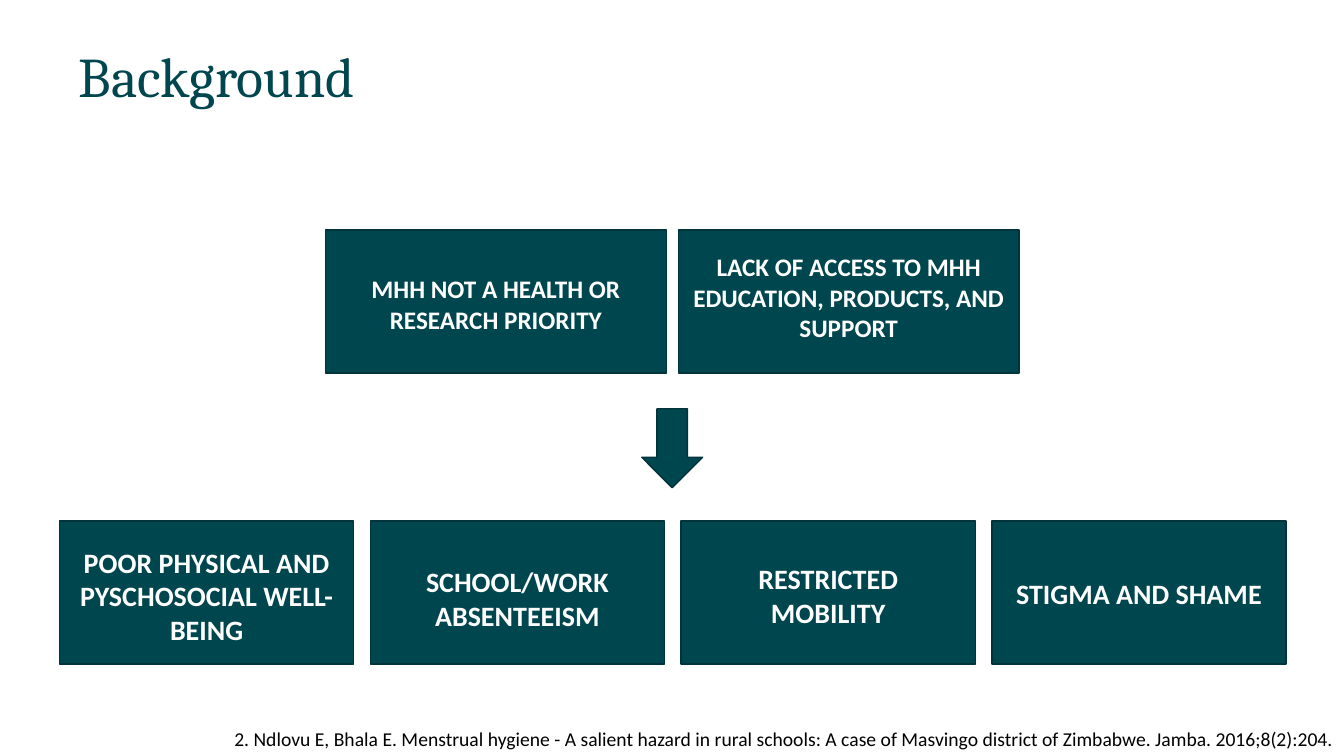
from pptx import Presentation
from pptx import util as u
from pptx.dml.color import RGBColor
from pptx.enum import shapes, text

# Content: wording and how far each label sits below its box centre (points)
TITLE = "Background"
CAUSES = [
    ("MHH NOT A HEALTH OR RESEARCH PRIORITY", 1.8),
    ("LACK OF ACCESS TO MHH EDUCATION, PRODUCTS, AND SUPPORT", -3.2),
]
EFFECTS = [
    ("POOR PHYSICAL AND PYSCHOSOCIAL WELL-BEING", 2),
    ("SCHOOL/WORK ABSENTEEISM", 4),
    ("RESTRICTED MOBILITY", 2),
    ("STIGMA AND SHAME", 0.7),
]
REFERENCE = ("2. Ndlovu E, Bhala E. Menstrual hygiene - A salient hazard in rural schools: "
             "A case of Masvingo district of Zimbabwe. Jamba. 2016;8(2):204.")

TEAL = RGBColor(0x00, 0x46, 0x4E)
DARK_TEAL = RGBColor(0x00, 0x34, 0x3A)
WHITE = RGBColor(0xFF, 0xFF, 0xFF)
BLACK = RGBColor(0x00, 0x00, 0x00)
BOX_HEIGHT = 102.2

deck = Presentation()
deck.slide_width, deck.slide_height = u.Pt(960), u.Pt(540)
page = deck.slides.add_slide(deck.slide_layouts[5])


def place(item, left, top, width, height):
    item.left, item.top = u.Pt(left), u.Pt(top)
    item.width, item.height = u.Pt(width), u.Pt(height)


def write(frame, wording, size, colour, align, font="Calibri", bold=False):
    frame.word_wrap = True
    frame.text = wording
    para = frame.paragraphs[0]
    para.alignment = align
    para.font.name, para.font.size, para.font.bold = font, u.Pt(size), bold
    para.font.color.rgb = colour
    return para


def add_teal(kind, left, top, width, height):
    shape = page.shapes.add_shape(kind, *map(u.Pt, (left, top, width, height)))
    shape.shadow.inherit = False
    shape.fill.solid()
    shape.fill.fore_color.rgb = TEAL
    shape.line.color.rgb = DARK_TEAL
    shape.line.width = u.Pt(1)
    return shape


def add_row(labels, left, top, width, pitch, size, side_margin):
    for index, (wording, drop) in enumerate(labels):
        box = add_teal(shapes.MSO_SHAPE.RECTANGLE, left + index * pitch, top, width, BOX_HEIGHT)
        frame = box.text_frame
        frame.vertical_anchor = text.MSO_ANCHOR.MIDDLE
        frame.margin_left = frame.margin_right = u.Pt(side_margin)
        frame.margin_top, frame.margin_bottom = u.Pt(8 + drop), u.Pt(8 - drop)
        write(frame, wording, size, WHITE, text.PP_ALIGN.CENTER, bold=True)


# Title
title = page.shapes.title
place(title, 49, 28.8, 844.5, 55.4)
title.text_frame.vertical_anchor = text.MSO_ANCHOR.MIDDLE
heading = write(title.text_frame, TITLE, 40, TEAL, text.PP_ALIGN.LEFT, font="Cambria")
heading.line_spacing = 0.9

# Causes, arrow, effects
add_row(CAUSES, left=232.5, top=164.2, width=243.4, pitch=252, size=18, side_margin=7.2)
add_teal(shapes.MSO_SHAPE.DOWN_ARROW, 458.4, 292, 43.5, 56.4)
add_row(EFFECTS, left=42.5, top=372.2, width=210.2, pitch=222, size=20, side_margin=13.5)

# Reference
note = page.shapes.add_textbox(0, 0, 0, 0)
place(note, 3.6, 515.5, 960, 24.3)
note.text_frame.margin_right = u.Pt(10.5)
write(note.text_frame, REFERENCE, 14, BLACK, text.PP_ALIGN.RIGHT)

deck.save("out.pptx")
